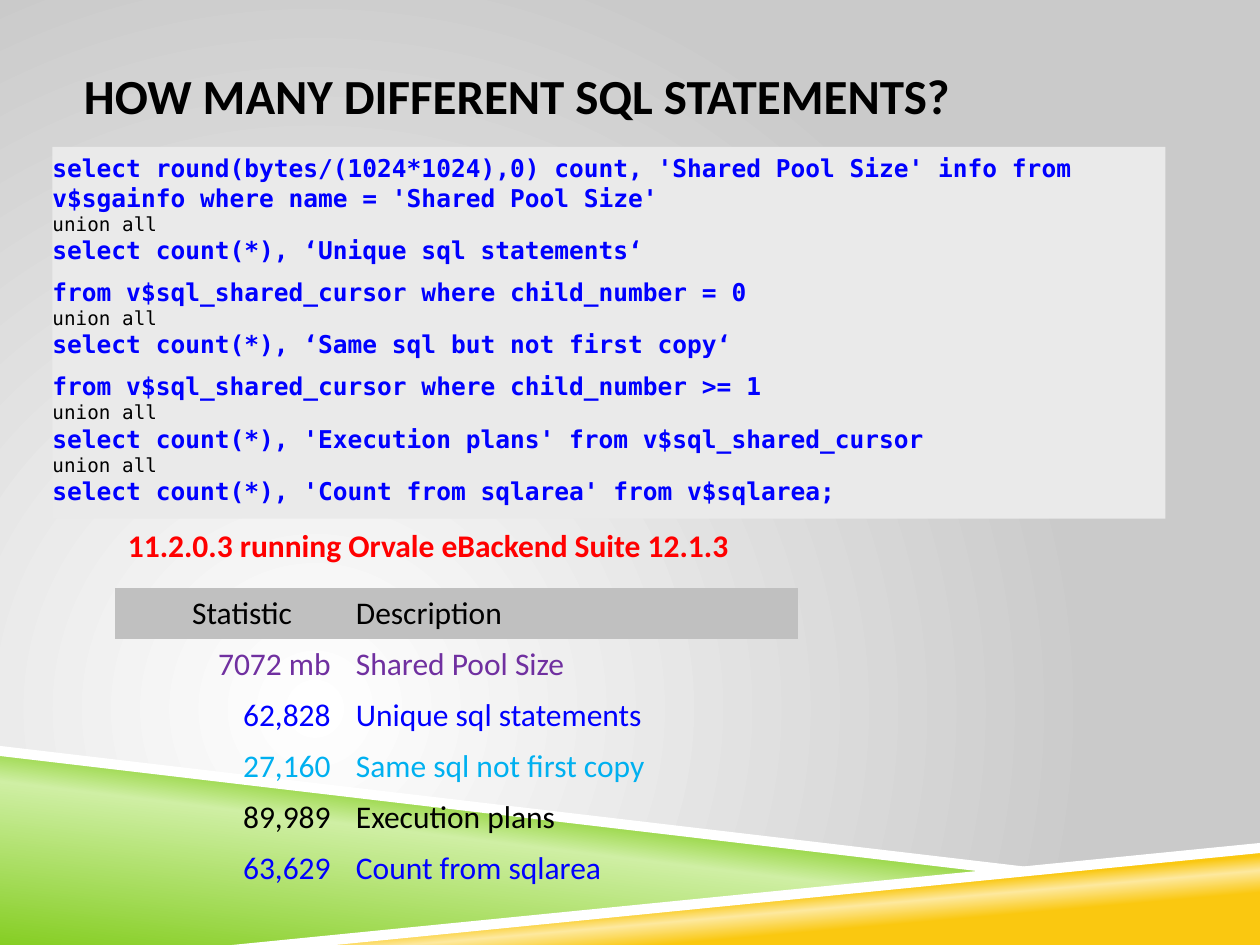
from lxml.etree import SubElement
from pptx import Presentation
from pptx.dml.color import RGBColor as RGB
from pptx.enum.shapes import MSO_SHAPE as Geo
from pptx.enum.text import MSO_ANCHOR as Anchor, MSO_AUTO_SIZE as Fit, PP_ALIGN as Align
from pptx.oxml.ns import qn
from pptx.util import Inches, Pt

COLS, ROWS = 120, 90
UNIT = Inches(10) / COLS

BLACK = RGB(0, 0, 0)
WHITE = RGB(255, 255, 255)
BLUE = RGB(0, 0, 255)
RED = RGB(255, 0, 0)
PURPLE = RGB(0x70, 0x30, 0xA0)
SKY = RGB(0, 0xB0, 0xF0)
SILVER = RGB(0xC0, 0xC0, 0xC0)
PALE = RGB(0xEA, 0xEA, 0xEA)
FOG = RGB(0xCA, 0xCA, 0xCA)
GREEN = RGB(0x86, 0xCE, 0x24)
MINT = RGB(0xCF, 0xEF, 0xA4)
GOLD = RGB(0xFA, 0xC8, 0x10)
CREAM = RGB(0xFD, 0xE9, 0x9F)

NO_GRID = "{2D5ABB26-0587-4C30-8999-92F81FD0307C}"
UNION = "union all"
QUERY = [
    ["select round(bytes/(1024*1024),0) count, 'Shared Pool Size' info from "
     "v$sgainfo where name = 'Shared Pool Size'",
     UNION, "select count(*), ‘Unique sql statements‘"],
    ["from v$sql_shared_cursor where child_number = 0",
     UNION, "select count(*), ‘Same sql but not first copy‘"],
    ["from v$sql_shared_cursor where child_number >= 1",
     UNION, "select count(*), 'Execution plans' from v$sql_shared_cursor",
     UNION, "select count(*), 'Count from sqlarea' from v$sqlarea;"],
]
STATS = [
    ("Statistic", "Description", BLACK),
    ("7072 mb", "Shared Pool Size", PURPLE),
    ("62,828", "Unique sql statements", BLUE),
    ("27,160", "Same sql not first copy", SKY),
    ("89,989", "Execution plans", BLACK),
    ("63,629", "Count from sqlarea", BLUE),
]


def grid(*nums):
    """Turn grid units (a twelfth of an inch) into lengths."""
    return [round(n * UNIT) for n in nums]


def blend(owner, fill, stops, angle=None):
    """Fill with a gradient: linear at an angle, or else circular."""
    fill.solid()
    old = next(owner.element.iter(qn("a:solidFill")))
    grad = old.makeelement(qn("a:gradFill"), {"rotWithShape": "1"})
    old.getparent().replace(old, grad)
    marks = SubElement(grad, qn("a:gsLst"))
    for pos, color in stops:
        mark = SubElement(marks, qn("a:gs"), pos=str(pos * 1000))
        SubElement(mark, qn("a:srgbClr"), val=str(color))
    if angle is None:
        ring = SubElement(grad, qn("a:path"), {"path": "circle"})
        SubElement(ring, qn("a:fillToRect"), l="50000", t="100000", r="100000", b="50000")
    else:
        SubElement(grad, qn("a:lin"), ang=str(angle * 60000), scaled="0")


class Deck:
    """Holds the text style and the current slide."""
    face, code = "Calibri", "DejaVu Sans Mono"

    def __init__(self):
        self.show = Presentation()
        self.show.slide_width, self.show.slide_height = grid(COLS, ROWS)
        self.slide = self.show.slides.add_slide(self.show.slide_layouts[6])
        self.shapes = self.slide.shapes

    def style(self, font, size, color, bold=False, face=face):
        font.name, font.size, font.bold = face, Pt(size), bold
        font.color.rgb = color

    def back(self, stops):
        blend(self.slide, self.slide.background.fill, stops)

    def band(self, points, color=None, stops=None, angle=0):
        first, *rest = [grid(*point) for point in points]
        pen = self.shapes.build_freeform(*first)
        pen.add_line_segments(rest, close=True)
        shape = pen.convert_to_shape()
        shape.shadow.inherit = False
        shape.line.fill.background()
        if stops:
            blend(shape, shape.fill, stops, angle)
        else:
            shape.fill.solid()
            shape.fill.fore_color.rgb = color

    def text(self, box, words, size, color, inset=None, anchor=Anchor.TOP, fit=Fit.NONE):
        frame = self.shapes.add_textbox(*grid(*box)).text_frame
        frame.word_wrap, frame.auto_size = True, fit
        frame.vertical_anchor = anchor
        if inset is not None:
            frame.margin_left = frame.margin_right = inset
        para = frame.paragraphs[0]
        para.text = words
        self.style(para.font, size, color, True)

    def listing(self, box, blocks):
        shape = self.shapes.add_shape(Geo.RECTANGLE, *grid(*box))
        shape.shadow.inherit = False
        shape.line.fill.background()
        shape.fill.solid()
        shape.fill.fore_color.rgb = PALE
        frame = shape.text_frame
        frame.word_wrap, frame.vertical_anchor = True, Anchor.TOP
        frame.margin_left = frame.margin_right = 0
        for i, lines in enumerate(blocks):
            para = frame.add_paragraph() if i else frame.paragraphs[0]
            para.alignment = Align.LEFT
            para.space_before = Pt(7 if i else 0)
            self.style(para.font, 14, BLUE, True, self.code)
            for j, line in enumerate(lines):
                if j:
                    para.add_line_break()
                run = para.add_run()
                run.text = line
                if line == UNION:
                    self.style(run.font, 11, BLACK, False, self.code)

    def table(self, box, widths, rows):
        frame = self.shapes.add_table(len(rows), len(widths), *grid(*box))
        next(frame.element.iter(qn("a:tableStyleId"))).text = NO_GRID
        table = frame.table
        table.first_row = table.horz_banding = False
        for col, width in zip(table.columns, grid(*widths)):
            col.width = width
        for r, (*words, color) in enumerate(rows):
            for c, word in enumerate(words):
                cell = table.cell(r, c)
                cell.vertical_anchor = Anchor.MIDDLE
                cell.text = word
                para = cell.text_frame.paragraphs[0]
                self.style(para.font, 18, color)
                if r:
                    cell.fill.background()
                    para.alignment = Align.LEFT if c else Align.RIGHT
                else:
                    cell.fill.solid()
                    cell.fill.fore_color.rgb = SILVER
        table.cell(0, 0).margin_left = grid(7.3)[0]


def main():
    deck = Deck()
    deck.back([(0, WHITE), (100, FOG)])
    deck.band([(0, 71.64), (95.04, 83.04), (24, ROWS), (0, ROWS)],
              stops=[(0, GREEN), (52, MINT), (66, GREEN)], angle=277)
    deck.band([(23.76, ROWS), (COLS, 80.64), (COLS, ROWS)],
              stops=[(28, GOLD), (40, CREAM), (48, GOLD)], angle=265)
    deck.band([(0, 71.04), (0, 72), (94.8, 83.16), (99.84, 82.8)], WHITE)
    deck.band([(COLS, 80.28), (22.08, ROWS), (31.92, ROWS), (COLS, 81.24)], WHITE)
    deck.text((8, 5, 108, 8), "HOW MANY DIFFERENT SQL STATEMENTS?", 28, BLACK,
              inset=0, anchor=Anchor.MIDDLE)
    deck.listing((5, 14, 106, 35.4), QUERY)
    deck.table((11, 56, 65, 28.8), (21.7, 43.3), STATS)
    deck.text((11, 49.5, 69, 4.8), "11.2.0.3 running Orvale eBackend Suite 12.1.3",
              18, RED, fit=Fit.SHAPE_TO_FIT_TEXT)
    deck.show.save("out.pptx")


if __name__ == "__main__":
    main()
